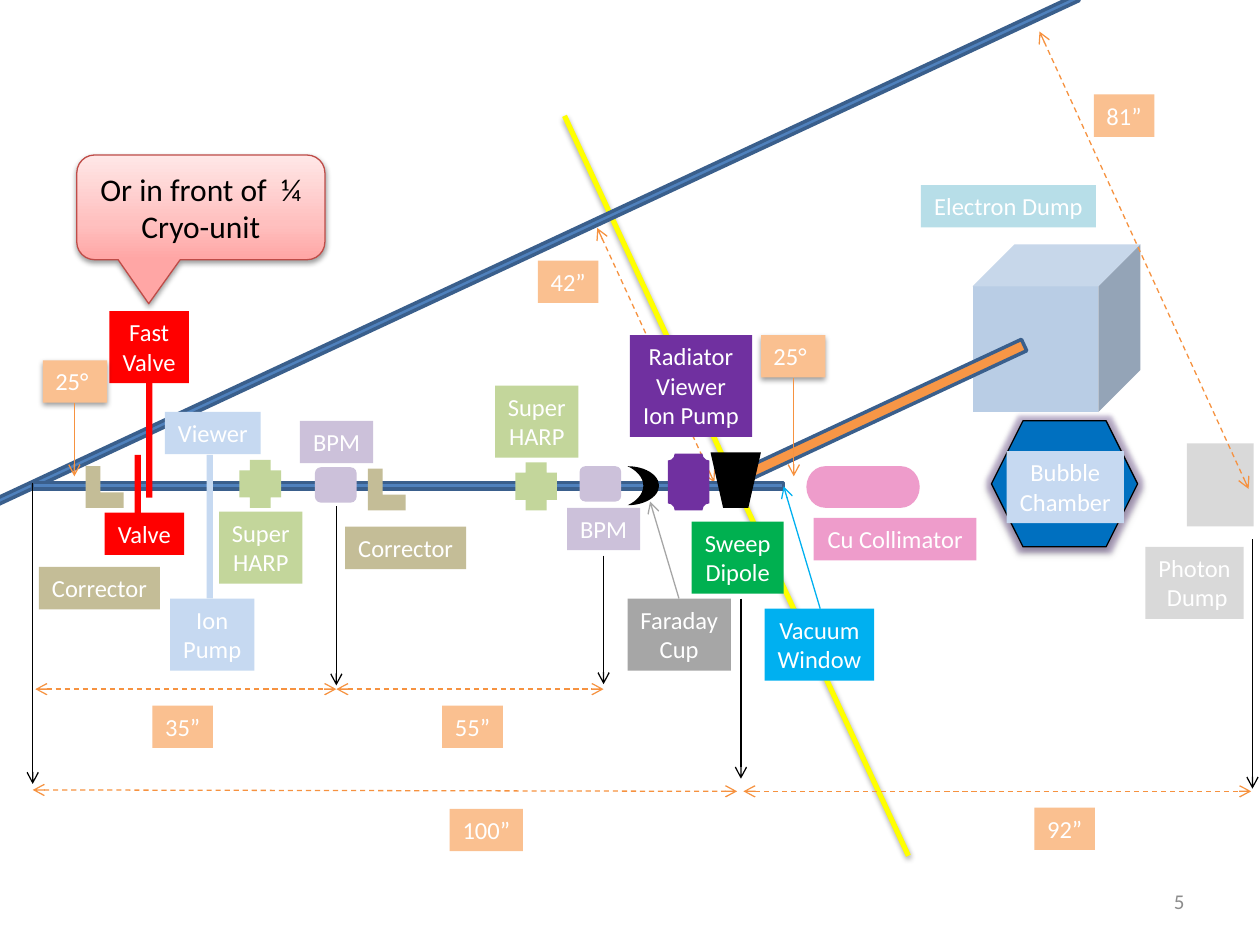
from dataclasses import dataclass

from pptx import Presentation
from pptx.dml.color import RGBColor
from pptx.enum.dml import MSO_LINE
from pptx.enum.shapes import MSO_CONNECTOR, MSO_SHAPE as Form
from pptx.enum.text import MSO_ANCHOR as Anchor, MSO_AUTO_SIZE as Fit, PP_ALIGN as Align
from pptx.oxml import parse_xml
from pptx.oxml.ns import nsdecls, qn
from pptx.util import Pt


@dataclass(frozen=True)
class Theme:
    font: str = "Calibri"
    label_size: int = 14
    callout_size: int = 18
    number_size: int = 12
    white: str = "FFFFFF"
    black: str = "000000"
    beam: str = "4F81BD"
    beam_edge: str = "3A5F8C"
    axis: str = "FFFF00"
    orange: str = "F79646"
    measure: str = "F69240"
    peach: str = "FAC090"
    red: str = "FF0000"
    pale_blue: str = "C6D9F1"
    cube: str = "B9CDE5"
    lilac: str = "CCC1DA"
    tan: str = "C4BD97"
    lime: str = "C3D69B"
    purple: str = "7030A0"
    green: str = "00B050"
    sky: str = "00B0F0"
    pink: str = "EE9CCB"
    aqua: str = "B7DEE8"
    silver: str = "D9D9D9"
    gray: str = "A6A6A6"
    blue: str = "0070C0"
    glow: str = "8064A2"
    callout_edge: str = "BF4C48"
    number: str = "8C8C8C"


@dataclass(frozen=True)
class Box:
    left: float
    top: float
    width: float
    height: float

    def at(self, x, y):
        return Pt(self.left + x), Pt(self.top + y)


THEME = Theme()
SHADOW = ('<a:outerShdw blurRad="40000" dist="20000" dir="5400000" rotWithShape="0">'
          '<a:srgbClr val="000000"><a:alpha val="38000"/></a:srgbClr></a:outerShdw>')
GLOW = (f'<a:glow rad="63500"><a:srgbClr val="{THEME.glow}">'
        '<a:alpha val="40000"/></a:srgbClr></a:glow>')
CALLOUT_STOPS = ((0, "FFA6A5"), (35, "FFC0BF"), (100, "FFE7E7"))


def apply(target, values):
    for name, value in values.items():
        setattr(target, name, value)


def set_effects(shape, effects=""):
    properties = shape._element.spPr
    for old in properties.findall(qn("a:effectLst")):
        properties.remove(old)
    properties.append(parse_xml(f'<a:effectLst {nsdecls("a")}>{effects}</a:effectLst>'))


def set_line(line, color, width):
    line.color.rgb = RGBColor.from_string(color)
    line.width = Pt(width)


def add_form(page, box, form, x, y, width, height, color, edge=None, edge_width=2,
             rotation=0, adjust=(), effects=""):
    shape = page.shapes.add_shape(form, *box.at(x, y), Pt(width), Pt(height))
    shape.shadow.inherit = False
    shape.fill.solid()
    shape.fill.fore_color.rgb = RGBColor.from_string(color)
    if edge:
        set_line(shape.line, edge, edge_width)
    else:
        shape.line.fill.background()
    shape.rotation = rotation
    for index, value in enumerate(adjust):
        shape.adjustments[index] = value
    if effects:
        set_effects(shape, effects)
    return shape


def write(shape, text, size, color, align=Align.CENTER, **frame_values):
    frame = shape.text_frame
    apply(frame, frame_values)
    for index, words in enumerate(text.split("\n")):
        para = frame.add_paragraph() if index else frame.paragraphs[0]
        para.alignment = align
        span = para.add_run()
        span.text = words
        apply(span.font, {"name": THEME.font, "size": Pt(size)})
        span.font.color.rgb = RGBColor.from_string(color)


def add_label(page, box, text, color, x, y, width, **values):
    height = 7.2 + 17 * len(text.split("\n"))
    shape = add_form(page, box, Form.RECTANGLE, x, y, width, height, color, **values)
    write(shape, text, THEME.label_size, THEME.white, word_wrap=False,
          vertical_anchor=Anchor.TOP, auto_size=Fit.SHAPE_TO_FIT_TEXT)
    return shape


def add_line(page, box, start, end, color, width=0.75, dash=False, ends=("tailEnd",), effects=""):
    line = page.shapes.add_connector(MSO_CONNECTOR.STRAIGHT, *box.at(*start), *box.at(*end))
    set_line(line.line, color, width)
    if dash:
        line.line.dash_style = MSO_LINE.DASH
    outline = line._element.spPr.find(qn("a:ln"))
    for end_name in ends:
        outline.append(parse_xml(f'<a:{end_name} {nsdecls("a")} type="arrow"/>'))
    set_effects(line, effects)


def add_span(page, box, start, end):
    add_line(page, box, start, end, THEME.measure, dash=True, ends=("headEnd", "tailEnd"))


def add_angle(page, box, x, y, arrow_x):
    label = add_label(page, box, "25°", THEME.peach, x, y, 36.7, effects=SHADOW)
    label.text_frame.word_wrap = True
    label.text_frame.paragraphs[0].alignment = Align.LEFT
    add_line(page, box, (arrow_x, y + 24.5), (arrow_x, 102.2), THEME.measure)


def add_parts(page, box, forms, labels):
    for form in forms:
        add_form(page, box, *form)
    for label in labels:
        add_label(page, box, *label)


def draw_beams(page, box):
    add_line(page, box, (322.6, 66.2), (519.1, 489), THEME.axis, 3, ends=(), effects=SHADOW)
    add_form(page, box, Form.CUBE, 555.8, 139.7, 95.8, 95.8, THEME.cube)
    add_form(page, box, Form.RECTANGLE, -34.6, 141.1, 682.6, 3.6, THEME.beam,
             THEME.beam_edge, rotation=-25)
    add_label(page, box, "42”", THEME.peach, 307.4, 149, 34.6)
    add_span(page, box, (341.3, 130.3), (408.2, 275.8))
    add_form(page, box, Form.RECTANGLE, 18.7, 275.8, 429.1, 3.6, THEME.beam, THEME.beam_edge)
    add_form(page, box, Form.RECTANGLE, 406.1, 233.3, 187.9, 7.2, THEME.orange,
             THEME.beam_edge, rotation=-25)


def draw_upstream(page, box):
    t = THEME
    add_parts(page, box, (
        (Form.RECTANGLE, 77, 89.9, 3.6, 36, t.red),
        (Form.RECTANGLE, 118.1, 89.9, 3.6, 82.1, t.pale_blue),
        (Form.RECTANGLE, 83.5, 46.7, 3.6, 67.7, t.red),
        (Form.ROUNDED_RECTANGLE, 180, 97, 23.8, 20.2, t.lilac),
        (Form.CROSS, 136.8, 92.8, 23.8, 27.4, t.lime),
    ), (
        ("Valve", t.red, 59.8, 123, 45.4),
        ("Ion\nPump", t.pale_blue, 97.2, 172, 48.2),
        ("Viewer", t.pale_blue, 94.3, 65.4, 54.7),
        ("BPM", t.lilac, 171.4, 70.5, 41.8),
        ("Corrector", t.tan, 197.3, 131, 69.1),
        ("Corrector", t.tan, 22.3, 154, 69.1),
        ("Fast\nValve", t.red, 62.6, 7.8, 45.4),
        ("Super\nHARP", t.lime, 125.3, 122.3, 47.5),
    ))
    for x, y in ((49, 96.4), (210.2, 97.8)):
        add_form(page, box, Form.CORNER, x, y, 21.6, 23.8, t.tan, adjust=(0.41, 0.39))
    add_angle(page, box, 24.5, 35.9, 42.5)


def draw_midstream(page, box):
    t = THEME
    add_parts(page, box, (
        (Form.CROSS, 14.5, 94.2, 23.8, 27.4, t.lime),
        (Form.ROUNDED_RECTANGLE, 51.2, 96.4, 23.8, 20.2, t.lilac),
        (Form.PLAQUE, 101.6, 89.2, 23.8, 32.4, t.purple),
        (Form.TRAPEZOID, 126, 88.5, 28.8, 31.7, t.black, None, 0, 180),
        (Form.MOON, 78.6, 96.4, 18, 22.3, t.black, None, 0, 180),
    ), (
        ("Super\nHARP", t.lime, 3, 50.3, 47.5),
        ("BPM", t.lilac, 44, 120.2, 41.8),
        ("Radiator\nViewer\nIon Pump", t.purple, 80, 21.5, 69.8),
        ("Sweep\nDipole", t.green, 115.3, 128, 52.6),
        ("Vacuum\nWindow", t.sky, 157, 177.8, 62.6),
        ("Faraday\nCup", t.gray, 78.6, 172, 59),
    ))
    add_angle(page, box, 154.9, 21.5, 173.6)
    add_line(page, box, (188.7, 177.8), (167.8, 107.9), t.sky)
    add_line(page, box, (108, 172), (91.5, 116.6), t.gray)


def draw_targets(page, box):
    t = THEME
    add_form(page, box, Form.HEXAGON, 116.6, 140.5, 83.5, 72, t.blue, t.black, 0.75,
             effects=GLOW + SHADOW)
    add_parts(page, box, (
        (Form.FLOWCHART_DIRECT_ACCESS_STORAGE, 10.8, 166.4, 64.8, 23.8, t.pink),
        (Form.RECTANGLE, 228.2, 153.4, 38.2, 47.5, t.silver),
    ), (
        ("Cu Collimator", t.pink, 15, 196, 93),
        ("Electron Dump", t.aqua, 76.3, 5.8, 100),
        ("Photon\n Dump", t.silver, 204.5, 212.5, 56.2),
        ("Bubble\nChamber", t.pale_blue, 125.3, 157.8, 67),
    ))


def draw_dimensions(page, box):
    for x, top, bottom in ((18.7, 275.8, 448), (192.2, 289.4, 391.7), (344.9, 317.5, 391),
                           (423.4, 342, 445), (715.7, 308.2, 450.7)):
        add_line(page, box, (x, top), (x, bottom), THEME.black)
    for start, end, text, x, y, width in (
        ((20.2, 393.8), (192.2, 393.8), "35”", 87.1, 403.2, 34.6),
        ((192.2, 393.8), (344.9, 393.8), "55”", 252.7, 403.2, 34.6),
        ((18.7, 451.4), (421.2, 452.2), "100”", 257, 462.2, 41.8),
        ((424.8, 452.2), (715, 452.2), "92”", 591.1, 461.5, 34.6),
        ((594, 18), (713.5, 279.4), "81”", 625, 54, 34.6),
    ):
        add_span(page, box, start, end)
        add_label(page, box, text, THEME.peach, x, y, width)


def draw_callout(page, box):
    shape = add_form(page, box, Form.ROUNDED_RECTANGULAR_CALLOUT, 0, 0, box.width, box.height,
                     THEME.white, THEME.callout_edge, 0.75, adjust=(-0.21, 0.92, 0.17),
                     effects=SHADOW)
    stops = "".join(f'<a:gs pos="{place * 1000}"><a:srgbClr val="{color}"/></a:gs>'
                    for place, color in CALLOUT_STOPS)
    gradient = parse_xml(f'<a:gradFill {nsdecls("a")} rotWithShape="1"><a:gsLst>{stops}</a:gsLst>'
                         '<a:lin ang="16200000" scaled="0"/></a:gradFill>')
    properties = shape._element.spPr
    properties.replace(properties.find(qn("a:solidFill")), gradient)
    write(shape, "Or in front of  ¼ Cryo-unit", THEME.callout_size, THEME.black,
          word_wrap=True, vertical_anchor=Anchor.MIDDLE)


def draw_number(page, box):
    shape = page.shapes.add_textbox(*box.at(0, 0), Pt(box.width), Pt(box.height))
    write(shape, "5", THEME.number_size, THEME.number, Align.RIGHT,
          word_wrap=True, vertical_anchor=Anchor.MIDDLE)


def main():
    deck = Presentation()
    apply(deck, {"slide_width": Pt(720), "slide_height": Pt(540)})
    page = deck.slides.add_slide(deck.slide_layouts[6])
    for draw, box in (
        (draw_beams, Box(0, 0, 720, 540)),
        (draw_upstream, Box(0, 170, 280, 220)),
        (draw_midstream, Box(280, 170, 220, 220)),
        (draw_targets, Box(450, 100, 270, 260)),
        (draw_dimensions, Box(0, 0, 720, 540)),
        (draw_callout, Box(43.9, 88.6, 141.8, 59.8)),
        (draw_number, Box(516.2, 500.4, 167.8, 28.8)),
    ):
        draw(page, box)
    deck.save("out.pptx")


if __name__ == "__main__":
    main()
